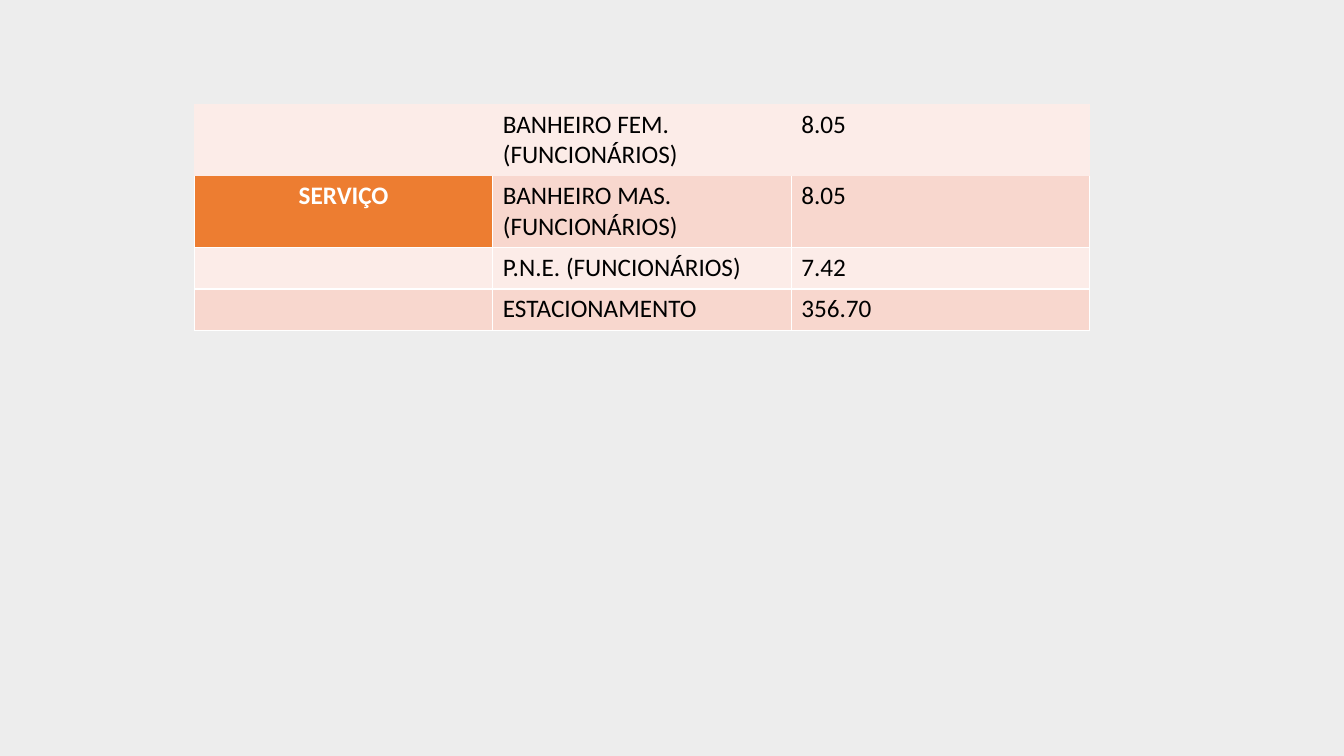
from lxml.etree import SubElement
from pptx import Presentation
from pptx.dml.color import RGBColor as RGB
from pptx.enum.text import PP_ALIGN as ALIGN
from pptx.oxml.ns import qn
from pptx.util import Cm, Pt

COLORS = {
    "background": "EDEDED",
    "light": "FCECE8",
    "band": "F8D7CE",
    "accent": "ED7D31",
    "white": "FFFFFF",
    "black": "000000",
}
ROWS = [
    ("", "BANHEIRO FEM. (FUNCIONÁRIOS)", "8.05"),
    ("SERVIÇO", "BANHEIRO MAS. (FUNCIONÁRIOS)", "8.05"),
    ("", "P.N.E. (FUNCIONÁRIOS)", "7.42"),
    ("", "ESTACIONAMENTO", "356.70"),
]
ROW_HEIGHTS = [1.81, 1.81, 1.04, 1.04]
COLUMN_WIDTH = 7.52
BODY = {"name": "Calibri", "size": Pt(18), "bold": False}
HEADING = {**BODY, "bold": True}


def set_fill(fill, color):
    fill.solid()
    fill.fore_color.rgb = RGB.from_string(COLORS[color])


def set_borders(cell, visible):
    tc_pr = cell._tc.get_or_add_tcPr()
    for side in ("L", "R", "T", "B"):
        ln = SubElement(tc_pr, qn(f"a:ln{side}"), w=str(Pt(1)))
        if side in visible:
            fill = SubElement(ln, qn("a:solidFill"))
            SubElement(fill, qn("a:srgbClr"), val=COLORS["white"])
        else:
            SubElement(ln, qn("a:noFill"))


def write_cell(cell, text, fill, borders, is_heading):
    set_borders(cell, borders)
    set_fill(cell.fill, fill)
    p = cell.text_frame.paragraphs[0]
    p.alignment = ALIGN.CENTER if is_heading else ALIGN.LEFT
    if text:
        p.add_run().text = text
    fonts = [r.font for r in p.runs] or [p.font]
    for font in fonts:
        for name, value in (HEADING if is_heading else BODY).items():
            setattr(font, name, value)
        font.color.rgb = RGB.from_string(COLORS["white" if is_heading else "black"])


def add_area_table(s, left, top):
    columns = len(ROWS[0])
    frame = s.shapes.add_table(len(ROWS), columns, Cm(left), Cm(top),
                               Cm(COLUMN_WIDTH * columns), Cm(sum(ROW_HEIGHTS)))
    table = frame.table
    table.first_row = table.horz_banding = False
    for column in table.columns:
        column.width = Cm(COLUMN_WIDTH)
    for i, (texts, height) in enumerate(zip(ROWS, ROW_HEIGHTS)):
        table.rows[i].height = Cm(height)
        borders = ("", "LRB", "LRTB", "LRTB")[i]
        for j, text in enumerate(texts):
            is_heading = j == 0 and bool(text)
            fill = "accent" if is_heading else ("light", "band")[i % 2]
            write_cell(table.cell(i, j), text, fill, borders, is_heading)


def main():
    prs = Presentation()
    prs.slide_width, prs.slide_height = Cm(33.87), Cm(19.05)
    s = prs.slides.add_slide(prs.slide_layouts[6])
    set_fill(s.background.fill, "background")
    add_area_table(s, 4.9, 2.62)
    prs.save("out.pptx")


if __name__ == "__main__":
    main()
